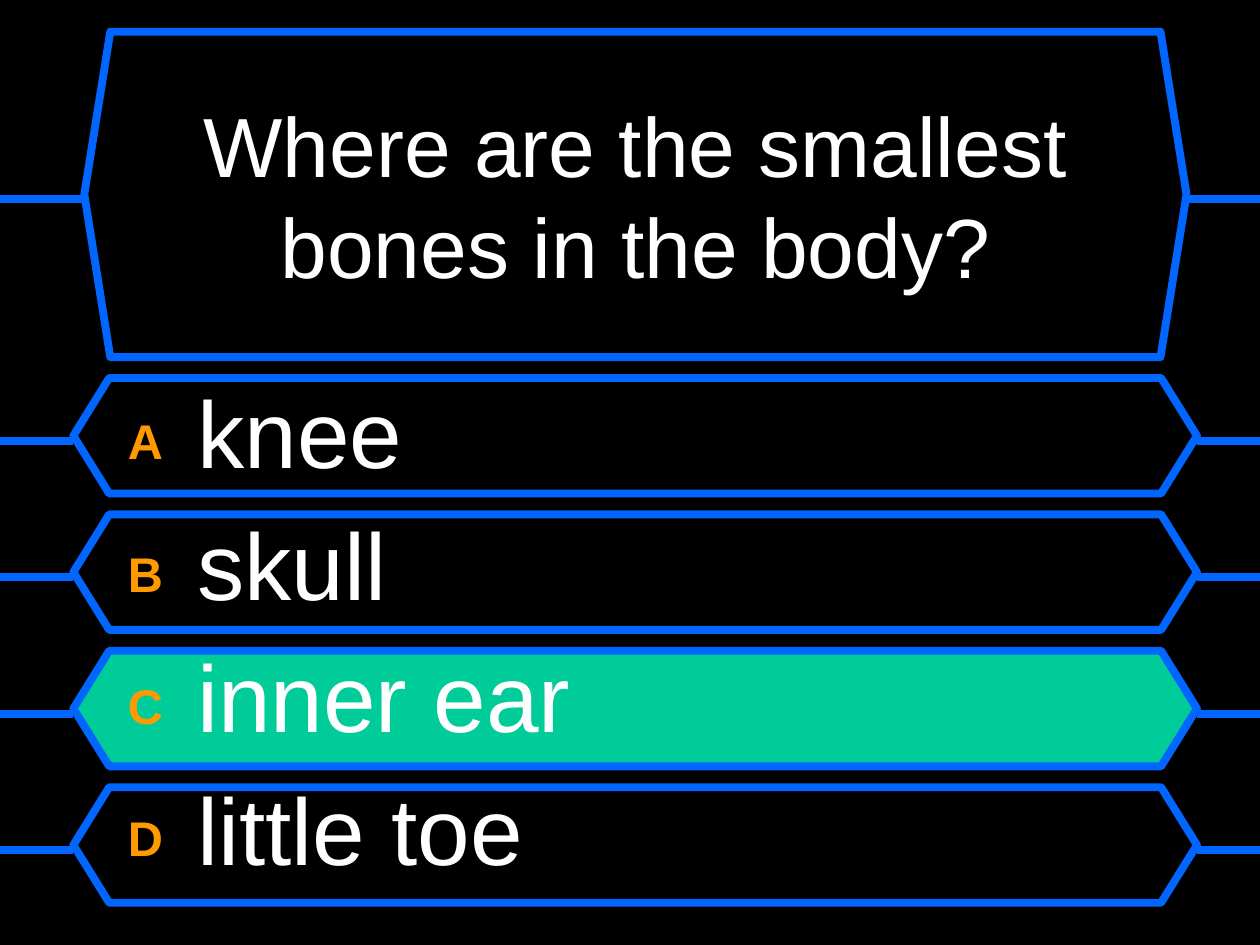
from dataclasses import dataclass

from lxml import etree
from pptx import Presentation
from pptx.dml.color import RGBColor
from pptx.enum.shapes import MSO_CONNECTOR, MSO_SHAPE
from pptx.enum.text import MSO_ANCHOR, MSO_AUTO_SIZE, PP_ALIGN
from pptx.oxml.ns import qn
from pptx.util import Cm, Pt

HEXAGON = MSO_SHAPE.HEXAGON
STRAIGHT = MSO_CONNECTOR.STRAIGHT
MIDDLE = MSO_ANCHOR.MIDDLE
TOP = MSO_ANCHOR.TOP
NO_FIT = MSO_AUTO_SIZE.NONE
CENTER = PP_ALIGN.CENTER
LEFT = PP_ALIGN.LEFT

WIDE, HIGH = 25.4, 19.05  # slide size in cm


@dataclass(frozen=True)
class Theme:
    back: RGBColor = RGBColor(0x00, 0x00, 0x00)
    text: RGBColor = RGBColor(0xFF, 0xFF, 0xFF)
    frame: RGBColor = RGBColor(0x00, 0x66, 0xFF)
    right: RGBColor = RGBColor(0x00, 0xCC, 0x99)
    letter: RGBColor = RGBColor(0xFF, 0x99, 0x00)
    font: str = "Arial"
    line: Pt = Pt(4.5)
    ask: Pt = Pt(48)
    mark: Pt = Pt(48)
    reply: Pt = Pt(54)


THEME = Theme()
ANSWERS = [("A", "knee"), ("B", "skull"), ("C", "inner ear"), ("D", "little toe")]
RIGHT = "C"


def style(run, size, color, bold=False):
    font = run.font
    font.name, font.size, font.bold = THEME.font, size, bold
    font.color.rgb = color


def lead(slide, start, end, y):
    """Draw a level line between two x positions."""
    line = slide.shapes.add_connector(STRAIGHT, Cm(start), Cm(y), Cm(end), Cm(y))
    line.line.color.rgb = THEME.frame
    line.line.width = THEME.line
    etree.SubElement(line.element.spPr, qn("a:effectLst"))


def panel(slide, box, point, fill):
    """Draw a hexagon with a lead to each slide edge."""
    left, top, width, height = box
    shape = slide.shapes.add_shape(HEXAGON, *map(Cm, box))
    shape.adjustments[0] = point
    shape.shadow.inherit = False
    shape.fill.solid()
    shape.fill.fore_color.rgb = fill
    shape.line.color.rgb = THEME.frame
    shape.line.width = THEME.line
    y = top + height / 2 + 0.1
    lead(slide, left, 0, y)
    lead(slide, WIDE, left + width, y)


def question(slide, box, text):
    """Place the framed title."""
    left, top, width, height = box
    panel(slide, box, 0.08, THEME.back)
    title = slide.shapes.title
    title.left, title.top = Cm(left + 0.42), Cm(top + 0.42)
    title.width, title.height = Cm(width - 0.84), Cm(height - 0.84)
    frame = title.text_frame
    frame.text = text
    frame.word_wrap = True
    frame.auto_size = NO_FIT
    frame.vertical_anchor = MIDDLE
    para = frame.paragraphs[0]
    para.alignment = CENTER
    style(para.runs[0], THEME.ask, THEME.text)
    # Bring the title in front of its panel
    slide.shapes.element.append(title.element)


def entry(para, letter, reply):
    """Write one answer: raised letter, tab, reply."""
    para.alignment = LEFT
    props = para._p.get_or_add_pPr()
    props.set("marL", str(Cm(1.4)))
    props.set("indent", str(Cm(-1.4)))
    space = etree.SubElement(props, qn("a:spcBef"))
    etree.SubElement(space, qn("a:spcPct")).set("val", "20000")
    mark, rest = para.add_run(), para.add_run()
    mark.text, rest.text = letter, "\t" + reply
    style(mark, THEME.mark, THEME.letter, True)
    mark.font._element.set("baseline", "10000")
    style(rest, THEME.reply, THEME.text)


def answers(slide, box, items):
    """Place the answer panels and the list over them."""
    left, top, width, height = box
    gap = 0.42
    tall = (height - gap * (len(items) - 1)) / len(items)
    for row, (letter, _) in enumerate(items):
        fill = THEME.right if letter == RIGHT else THEME.back
        panel(slide, (left, top + row * (tall + gap), width, tall), 0.31, fill)
    area = (left + 0.85, top - 0.21, width - 1.5, height + 0.42)
    frame = slide.shapes.add_textbox(*map(Cm, area)).text_frame
    frame.word_wrap = True
    frame.vertical_anchor = TOP
    for row, item in enumerate(items):
        para = frame.add_paragraph() if row else frame.paragraphs[0]
        entry(para, *item)


def main():
    deck = Presentation()
    deck.slide_width, deck.slide_height = Cm(WIDE), Cm(HIGH)
    slide = deck.slides.add_slide(deck.slide_layouts[5])
    back = slide.background.fill
    back.solid()
    back.fore_color.rgb = THEME.back
    question(slide, (1.7, 0.64, 22.22, 6.56),
             "Where are the smallest bones in the body?")
    answers(slide, (1.48, 7.62, 22.65, 10.58), ANSWERS)
    deck.save("out.pptx")


if __name__ == "__main__":
    main()
